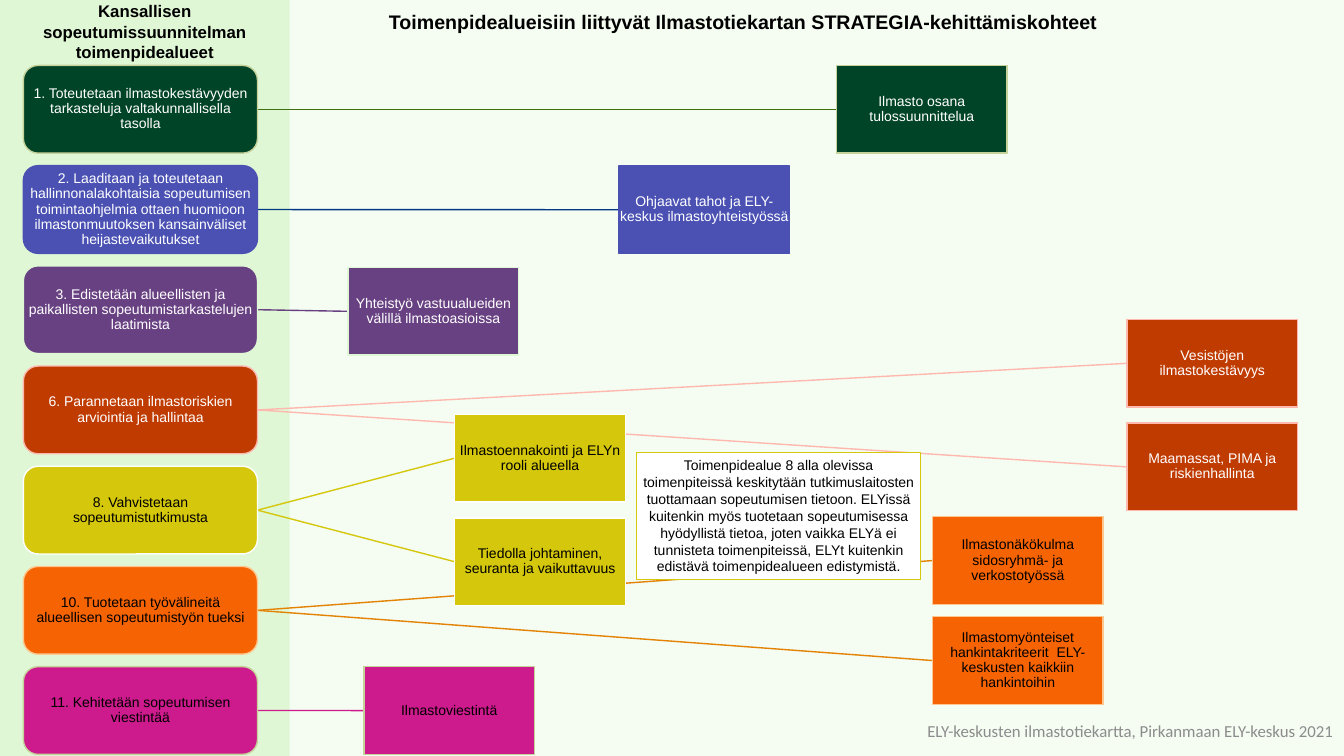
"""Builds a slide linking adaptation plan areas to climate roadmap development targets."""
import pptx
import pptx.util
import pptx.dml.color
import pptx.enum.shapes
import pptx.enum.text
import pptx.oxml
import pptx.oxml.ns

Cm, Pt = pptx.util.Cm, pptx.util.Pt
RGBColor = pptx.dml.color.RGBColor
SHAPE = pptx.enum.shapes.MSO_SHAPE
ALIGN = pptx.enum.text.PP_ALIGN
ANCHOR = pptx.enum.text.MSO_ANCHOR

BLACK = RGBColor(0x00, 0x00, 0x00)
WHITE = RGBColor(0xFF, 0xFF, 0xFF)
GREY = RGBColor(0x8C, 0x8C, 0x8C)
MINT = RGBColor(0xDF, 0xF7, 0xD5)
SAGE = RGBColor(0xC5, 0xD2, 0x9A)
FOREST = RGBColor(0x00, 0x44, 0x27)
LEAF = RGBColor(0x3E, 0x70, 0x0F)
INDIGO = RGBColor(0x4A, 0x51, 0xB3)
NAVY = RGBColor(0x00, 0x38, 0x83)
PURPLE = RGBColor(0x68, 0x41, 0x82)
RUST = RGBColor(0xC0, 0x3B, 0x00)
SALMON = RGBColor(0xFE, 0xB8, 0xAE)
YELLOW = RGBColor(0xD5, 0xC7, 0x0C)
ORANGE = RGBColor(0xF6, 0x63, 0x03)
PEACH = RGBColor(0xFE, 0xC7, 0x8F)
AMBER = RGBColor(0xE4, 0x82, 0x03)
MAGENTA = RGBColor(0xCD, 0x1A, 0x8C)

SLIDE_WIDTH, SLIDE_HEIGHT = 33.87, 19.05
BAND_WIDTH = 7.3
AREA_LEFT, AREA_TOP, AREA_PITCH, AREA_WIDTH = 0.59, 1.65, 2.525, 5.9
TARGET_WIDTH, BOX_HEIGHT = 4.3, 2.21
RIGHT_SITE, LEFT_SITE = 3, 1

AREAS = [
    ("1. Toteutetaan ilmastokestävyyden tarkasteluja valtakunnallisella tasolla",
     FOREST, SAGE, LEAF, WHITE,
     [(21.08, 1.65, "Ilmasto osana tulossuunnittelua")]),
    ("2. Laaditaan ja toteutetaan hallinnonalakohtaisia sopeutumisen toimintaohjelmia "
     "ottaen huomioon ilmastonmuutoksen kansainväliset heijastevaikutukset",
     INDIGO, INDIGO, NAVY, WHITE,
     [(15.6, 4.18, "Ohjaavat tahot ja ELY-keskus ilmastoyhteistyössä")]),
    ("3. Edistetään alueellisten ja paikallisten sopeutumistarkastelujen laatimista",
     PURPLE, MINT, PURPLE, WHITE,
     [(8.77, 6.74, "Yhteistyö vastuualueiden välillä ilmastoasioissa")]),
    ("6. Parannetaan ilmastoriskien arviointia ja hallintaa",
     RUST, SALMON, SALMON, WHITE,
     [(28.4, 8.05, "Vesistöjen ilmastokestävyys"),
      (28.4, 10.66, "Maamassat, PIMA ja riskienhallinta")]),
    ("8. Vahvistetaan sopeutumistutkimusta",
     YELLOW, WHITE, YELLOW, BLACK,
     [(11.46, 10.44, "Ilmastoennakointi ja ELYn rooli alueella"),
      (11.46, 13.05, "Tiedolla johtaminen, seuranta ja vaikuttavuus")]),
    ("10. Tuotetaan työvälineitä alueellisen sopeutumistyön tueksi",
     ORANGE, PEACH, AMBER, BLACK,
     [(23.5, 13.02, "Ilmastonäkökulma sidosryhmä- ja verkostotyössä"),
      (23.5, 15.54, "Ilmastomyönteiset hankintakriteerit  ELY-keskusten kaikkiin hankintoihin")]),
    ("11. Kehitetään sopeutumisen viestintää",
     MAGENTA, SAGE, MAGENTA, BLACK,
     [(9.17, 16.8, "Ilmastoviestintä")]),
]


def write(holder, text, size, colour, align, anchor, inset=0, font="Arial", bold=False, spacing=1.0):
    frame = holder.text_frame
    frame.text = text
    frame.word_wrap = True
    frame.auto_size = pptx.enum.text.MSO_AUTO_SIZE.NONE
    frame.vertical_anchor = anchor
    frame.margin_left = frame.margin_right = frame.margin_top = frame.margin_bottom = Cm(inset)
    paragraph = frame.paragraphs[0]
    paragraph.alignment = align
    paragraph.line_spacing = spacing
    run_font = paragraph.runs[0].font
    run_font.name, run_font.size, run_font.bold = font, Pt(size), bold
    run_font.color.rgb = colour


def add_box(kind, left, top, width, height, fill, outline=None, outline_width=1):
    box = slide.shapes.add_shape(kind, Cm(left), Cm(top), Cm(width), Cm(height))
    box.shadow.inherit = False
    box.fill.solid()
    box.fill.fore_color.rgb = fill
    if outline is None:
        box.line.fill.background()
    else:
        box.line.color.rgb = outline
        box.line.width = Pt(outline_width)
    return box


deck = pptx.Presentation()
deck.slide_width, deck.slide_height = Cm(SLIDE_WIDTH), Cm(SLIDE_HEIGHT)
slide = deck.slides.add_slide(deck.slide_layouts[5])

backdrop = add_box(SHAPE.RECTANGLE, 0, 0, SLIDE_WIDTH, SLIDE_HEIGHT, MINT)
backdrop_colour = backdrop._element.spPr.find(".//" + pptx.oxml.ns.qn("a:srgbClr"))
backdrop_colour.append(pptx.oxml.parse_xml(
    f'<a:alpha {pptx.oxml.ns.nsdecls("a")} val="30000"/>'))
area_band = add_box(SHAPE.RECTANGLE, 0, 0, BAND_WIDTH, SLIDE_HEIGHT, MINT)

for row, (area_text, fill, outline, link_colour, text_colour, targets) in enumerate(AREAS):
    area = add_box(SHAPE.ROUNDED_RECTANGLE, AREA_LEFT, AREA_TOP + row * AREA_PITCH,
                   AREA_WIDTH, BOX_HEIGHT, fill, outline)
    write(area, area_text, 10, text_colour, ALIGN.CENTER, ANCHOR.MIDDLE, 0.02, spacing=0.9)
    for left, top, target_text in targets:
        target = add_box(SHAPE.RECTANGLE, left, top, TARGET_WIDTH, BOX_HEIGHT, fill, outline)
        write(target, target_text, 10, text_colour, ALIGN.CENTER, ANCHOR.MIDDLE, 0.02, spacing=0.9)
        link = slide.shapes.add_connector(pptx.enum.shapes.MSO_CONNECTOR.STRAIGHT, 0, 0, 0, 0)
        link.begin_connect(area, RIGHT_SITE)
        link.end_connect(target, LEFT_SITE)
        link.line.color.rgb = link_colour
        link.line.width = Pt(1)
        link._element.spPr.append(pptx.oxml.parse_xml(
            f'<a:effectLst {pptx.oxml.ns.nsdecls("a")}/>'))
        area_band._element.addnext(link._element)

area_heading = slide.shapes.add_textbox(Cm(0), Cm(0.03), Cm(BAND_WIDTH), Cm(1.55))
write(area_heading, "Kansallisen sopeutumissuunnitelman toimenpidealueet",
      12, BLACK, ALIGN.CENTER, ANCHOR.TOP, bold=True)

title = slide.shapes.title
title.left, title.top, title.width, title.height = Cm(9.8), Cm(0.25), Cm(20.2), Cm(0.6)
write(title, "Toimenpidealueisiin liittyvät Ilmastotiekartan STRATEGIA-kehittämiskohteet",
      14, BLACK, ALIGN.LEFT, ANCHOR.TOP, bold=True)
area_heading._element.addnext(title._element)

research_note = add_box(SHAPE.RECTANGLE, 16.05, 11.4, 7.14, 3.2, WHITE, YELLOW, 0.75)
write(research_note,
      "Toimenpidealue 8 alla olevissa toimenpiteissä keskitytään tutkimuslaitosten tuottamaan "
      "sopeutumisen tietoon. ELYissä kuitenkin myös tuotetaan sopeutumisessa hyödyllistä tietoa, "
      "joten vaikka ELYä ei tunnisteta toimenpiteissä, ELYt kuitenkin edistävä "
      "toimenpidealueen edistymistä.",
      10, BLACK, ALIGN.CENTER, ANCHOR.MIDDLE, 0.1)

source_line = slide.shapes.add_textbox(Cm(20.83), Cm(18.16), Cm(12.78), Cm(0.53))
write(source_line, "ELY-keskusten ilmastotiekartta, Pirkanmaan ELY-keskus 2021",
      12, GREY, ALIGN.RIGHT, ANCHOR.MIDDLE, font="Calibri")

deck.save("out.pptx")
